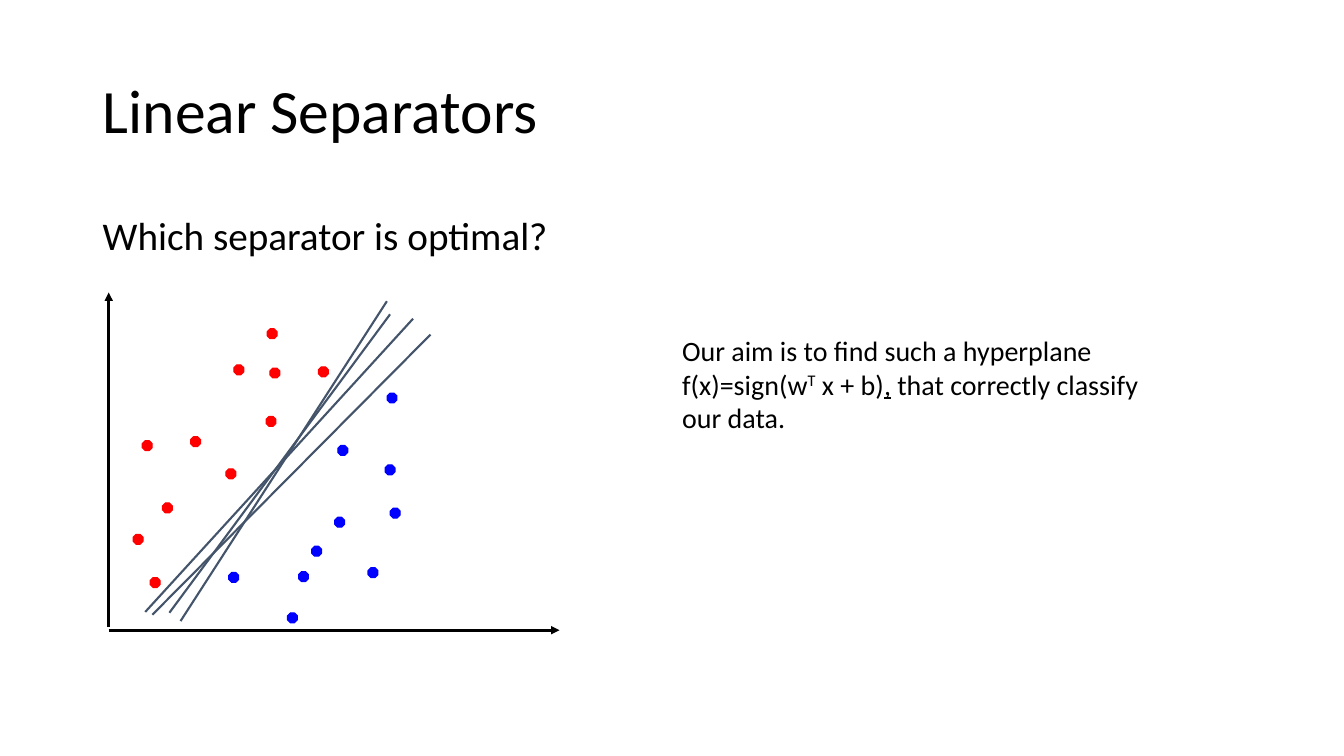
from lxml import etree
from pptx import Presentation
from pptx.dml.color import RGBColor
from pptx.enum.shapes import MSO_CONNECTOR, MSO_SHAPE
from pptx.enum.text import MSO_ANCHOR, MSO_AUTO_SIZE, PP_ALIGN
from pptx.oxml.ns import qn
from pptx.util import Cm, Pt

STRAIGHT = MSO_CONNECTOR.STRAIGHT
OCTAGON = MSO_SHAPE.OCTAGON
MIDDLE = MSO_ANCHOR.MIDDLE
NO_AUTOFIT = MSO_AUTO_SIZE.NONE
LEFT = PP_ALIGN.LEFT

BLACK, SLATE, RED, BLUE = "000000", "44546A", "FF0000", "0000FF"
DOT_SIZE = 0.25


def rgb(hex_color):
    return RGBColor.from_string(hex_color)


def add_line(ends, color, width):
    """Draw a line through (x1, y1, x2, y2) in cm and return its a:ln element."""
    line = slide.shapes.add_connector(STRAIGHT, *[Cm(value) for value in ends])
    line.line.color.rgb = rgb(color)
    line.line.width = Pt(width)
    etree.SubElement(line._element.spPr, qn("a:effectLst"))
    return line.line._get_or_add_ln()


prs = Presentation()
prs.slide_width, prs.slide_height = Cm(33.87), Cm(19.05)
slide = prs.slides.add_slide(prs.slide_layouts[5])

# Title, question and explanation
title = slide.shapes.title
title.left, title.top, title.width, title.height = Cm(2.34), Cm(1.02), Cm(29.21), Cm(3.68)
title.text_frame.text = "Linear Separators"
title.text_frame.vertical_anchor = MIDDLE

question = slide.shapes.add_textbox(Cm(2.34), Cm(5.33), Cm(29.21), Cm(11.81))
question.text_frame.text = "Which separator is optimal?"
question.text_frame.paragraphs[0].space_before = Pt(10)

aim = slide.shapes.add_textbox(Cm(16.94), Cm(8.28), Cm(12.8), Cm(3.58))
aim_paragraph = aim.text_frame.paragraphs[0]
aim_parts = ["Our aim is to find such a hyperplane f(x)=sign(w", "T", " x + b)", ",",
             " that correctly classify our data."]
for part in aim_parts:
    run = aim_paragraph.add_run()
    run.text = part
    if part == "T":
        run._r.get_or_add_rPr().set("baseline", "30000")
    elif part == ",":
        run.font.underline = True

for box, size, spacing in [(title, 44, 0.9), (question, 28, 0.9), (aim, 20, 1.0)]:
    box.text_frame.word_wrap = True
    box.text_frame.auto_size = NO_AUTOFIT
    paragraph = box.text_frame.paragraphs[0]
    paragraph.alignment = LEFT
    paragraph.line_spacing = spacing
    paragraph.font.name = "Calibri"
    paragraph.font.size = Pt(size)
    paragraph.font.color.rgb = rgb(BLACK)

# Axes
for axis in [(2.74, 15.88, 14.1, 15.88), (2.74, 15.8, 2.74, 7.37)]:
    axis_outline = add_line(axis, BLACK, 2)
    etree.SubElement(axis_outline, qn("a:tailEnd"), type="triangle")

# Candidate separators
separators = [
    (3.66, 15.42, 10.41, 8.03),
    (4.27, 15.44, 9.83, 7.92),
    (4.55, 15.65, 9.75, 7.59),
    (3.84, 15.49, 10.85, 8.43),
]
for separator in separators:
    add_line(separator, SLATE, 1.5)

# Centres of the data points of each class, in cm
classes = {
    RED: [(5.82, 11.94), (6.02, 9.32), (6.86, 8.41), (3.71, 11.23), (4.22, 12.8),
          (6.83, 10.62), (3.48, 13.59), (4.93, 11.13), (3.91, 14.68), (6.93, 9.4),
          (8.15, 9.37)],
    BLUE: [(9.96, 12.93), (7.65, 14.53), (7.37, 15.57), (5.89, 14.55), (8.64, 11.35),
           (7.98, 13.89), (9.4, 14.43), (9.83, 11.84), (9.88, 10.03), (8.56, 13.16)],
}
for color, centres in classes.items():
    for x, y in centres:
        dot = slide.shapes.add_shape(OCTAGON, Cm(x - DOT_SIZE / 2), Cm(y - DOT_SIZE / 2),
                                     Cm(DOT_SIZE), Cm(DOT_SIZE))
        dot.shadow.inherit = False
        dot.fill.solid()
        dot.fill.fore_color.rgb = rgb(color)
        dot.line.color.rgb = rgb(color)
        dot.line.width = Pt(0.75)

prs.save("out.pptx")
